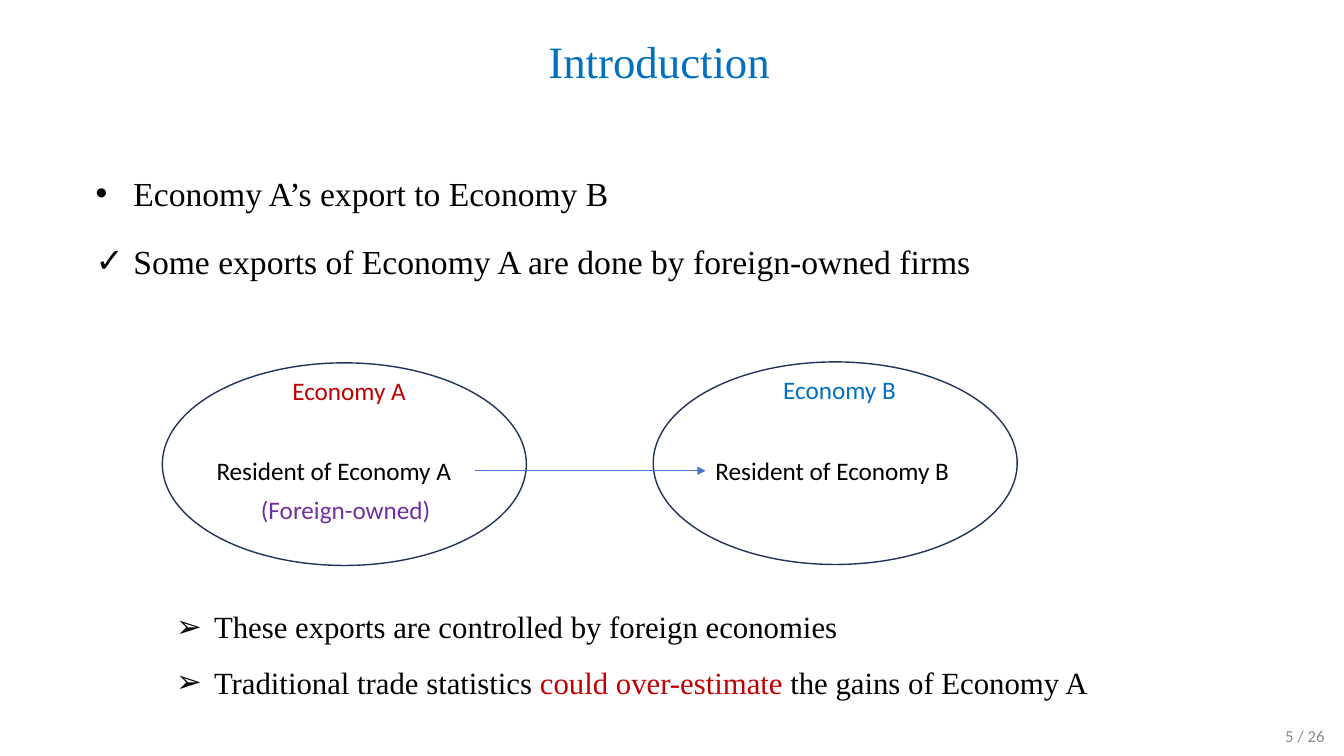
from dataclasses import dataclass

from lxml.etree import SubElement
from pptx import Presentation
from pptx.dml.color import RGBColor as RGB
from pptx.enum.shapes import MSO_CONNECTOR as CONN, MSO_SHAPE as SHAPE
from pptx.enum.text import MSO_ANCHOR as ANCHOR, PP_ALIGN as ALIGN
from pptx.oxml.ns import qn
from pptx.util import Pt


@dataclass(frozen=True)
class Theme:
    serif: str = "Times New Roman"
    sans: str = "Calibri"
    bullet: str = "Arial"
    black: str = "000000"
    blue: str = "0070C0"
    red: str = "C00000"
    purple: str = "7030A0"
    grey: str = "8C8C8C"
    outline: str = "203359"
    arrow: str = "4874CB"
    title: int = 32
    body: int = 24
    note: int = 22
    label: int = 18
    footer: int = 12


class Deck:
    def __init__(self, theme, width, height):
        self.t = theme
        self.prs = Presentation()
        self.prs.slide_width, self.prs.slide_height = Pt(width), Pt(height)
        self.s = self.prs.slides.add_slide(self.prs.slide_layouts[6])

    def box(self, x, y, w, h, anchor=ANCHOR.TOP):
        sp = self.s.shapes.add_textbox(Pt(x), Pt(y), Pt(w), Pt(h))
        sp.text_frame.word_wrap = True
        sp.text_frame.vertical_anchor = anchor
        return sp

    def run(self, p, text, size, font, color):
        r = p.add_run()
        r.text = text
        r.font.size, r.font.name = Pt(size), font
        r.font.color.rgb = RGB.from_string(color)

    def line(self, x, y, w, h, text, size, font, color,
             align=ALIGN.LEFT, anchor=ANCHOR.TOP, spacing=1.0):
        sp = self.box(x, y, w, h, anchor)
        p = sp.text_frame.paragraphs[0]
        p.alignment, p.line_spacing = align, spacing
        self.run(p, text, size, font, color)
        return sp

    def label(self, x, y, w, text, color):
        return self.line(x, y, w, 29, text, self.t.label, self.t.sans, color)

    def bullets(self, x, y, w, h, items, size, spacing, gap=0, align=ALIGN.LEFT):
        tf = self.box(x, y, w, h).text_frame
        for i, (mark, runs) in enumerate(items):
            p = tf.add_paragraph() if i else tf.paragraphs[0]
            p.alignment, p.line_spacing = align, spacing
            p.space_before = p.space_after = Pt(gap)
            pPr = p._p.get_or_add_pPr()
            pPr.set("marL", str(Pt(27)))
            pPr.set("indent", str(-Pt(27)))
            SubElement(pPr, qn("a:buFont")).set("typeface", self.t.bullet)
            SubElement(pPr, qn("a:buChar")).set("char", mark)
            for text, color in runs:
                self.run(p, text, size, self.t.serif, color)

    def economy(self, x, y, name, color):
        sp = self.s.shapes.add_shape(SHAPE.OVAL, Pt(x), Pt(y), Pt(260), Pt(144.7))
        sp.shadow.inherit = False
        sp.fill.background()
        sp.line.color.rgb = RGB.from_string(self.t.outline)
        sp.line.width = Pt(1)
        self.label(x + 85.7, y + 5, 111.6, name, color)

    def arrow(self, x, y, target):
        c = self.s.shapes.add_connector(CONN.STRAIGHT, Pt(x), Pt(y), target.left, Pt(y))
        c.end_connect(target, 1)
        c.line.color.rgb = RGB.from_string(self.t.arrow)
        c.line.width = Pt(1)
        SubElement(c.line._get_or_add_ln(), qn("a:tailEnd")).set("type", "triangle")
        SubElement(c._element.spPr, qn("a:effectLst"))


def main():
    t = Theme()
    d = Deck(t, 960, 540)
    d.bullets(61.2, 113, 838, 210, [
        ("•", [("Economy A’s export to Economy B", t.black)]),
        ("✓", [("Some exports of Economy A are done by foreign-owned firms", t.black)]),
    ], t.body, 1.25, 6, ALIGN.JUSTIFY)
    d.line(153.4, 21.6, 635, 48.2, "Introduction", t.title, t.serif, t.blue,
           ALIGN.CENTER, ANCHOR.MIDDLE, 0.9)
    d.line(737.3, 511.2, 216, 28.8, "5 / 26", t.footer, t.sans, t.grey,
           ALIGN.RIGHT, ANCHOR.MIDDLE)

    d.economy(116, 259.2, "Economy A", t.red)
    d.economy(466.6, 258.5, "Economy B", t.blue)
    d.label(147.6, 321.8, 197.3, "Resident of Economy A", t.black)
    resident_b = d.label(504, 321.8, 197.3, "Resident of Economy B", t.black)
    d.label(179.3, 349.2, 146.2, "(Foreign-owned)", t.purple)
    d.arrow(339.1, 336.3, resident_b)

    d.bullets(118.8, 417.6, 677.5, 82.8, [
        ("➢", [("These exports are controlled by foreign economies", t.black)]),
        ("➢", [("Traditional trade statistics ", t.black),
               ("could over-estimate ", t.red),
               ("the gains of Economy A", t.black)]),
    ], t.note, 1.5)
    d.prs.save("out.pptx")


if __name__ == "__main__":
    main()
